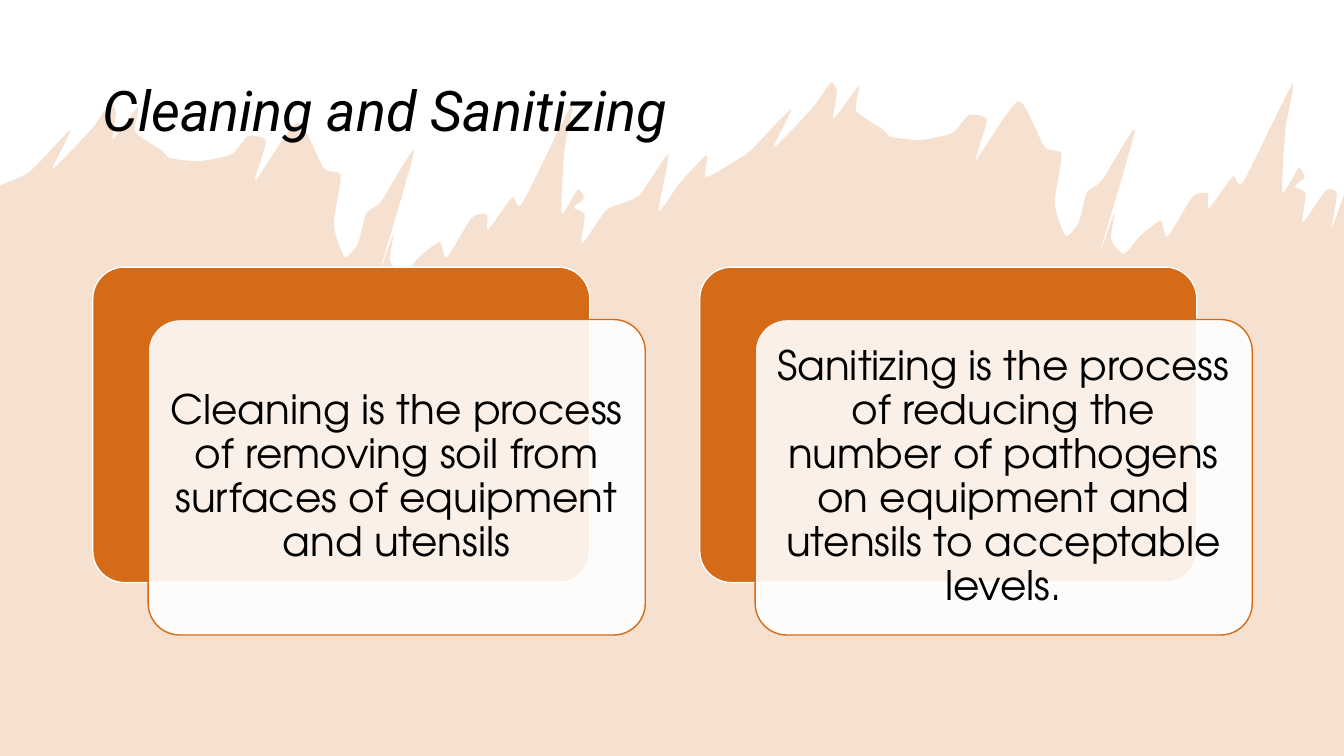
from pptx import Presentation
from pptx.dml.color import RGBColor
from pptx.enum.shapes import MSO_SHAPE
from pptx.enum.text import MSO_ANCHOR, PP_ALIGN
from pptx.oxml.ns import qn
from pptx.util import Inches, Pt
from lxml.etree import SubElement

# Content
HEADING = "Cleaning and Sanitizing"
DEFINITIONS = [
    "Cleaning is the process of removing soil from surfaces of equipment and utensils",
    "Sanitizing is the process of reducing the number of pathogens on equipment "
    "and utensils to acceptable levels.",
]
ORANGE, WHITE, BLACK = "D56A17", "FFFFFF", "000000"
SLIDE_W, SLIDE_H = 13.33, 7.5
HEADING_FORMAT = {"name": "Roboto", "size": Pt(40), "italic": True}
CARD_FORMAT = {"name": "TeX Gyre Adventor", "size": Pt(29)}

# Torn edge in inches; the tear is used twice, first shifted left and down
TEAR_SHIFT = (-7.15, 0.21)
TEAR = [
    (7.45, 1.49), (7.85, 1.08), (7.67, 1.47), (8.06, 1.07), (8.24, 0.82), (8.3, 0.91),
    (8.27, 1.18), (8.52, 0.85), (8.49, 1.1), (8.75, 1.28), (8.84, 1.36), (9.13, 1.39),
    (9.45, 1.32), (9.61, 1.14), (9.79, 1.19), (9.68, 1.59), (10.1, 1), (10.36, 1.46),
    (10.53, 1.53), (10.46, 2.02), (10.57, 2.34), (10.7, 2.21), (10.78, 1.91),
    (10.93, 1.79), (11.26, 1.28), (10.91, 2.5), (11.05, 2.12), (11.02, 2.38),
    (11.15, 2.52), (11.3, 2.35), (11.51, 2.19), (11.58, 2.35), (11.83, 1.95),
    (11.98, 1.92), (11.99, 2.07), (12.23, 1.75), (12.33, 1.81), (12.82, 0.83),
    (12.75, 1.27), (12.72, 1.91), (12.88, 1.67), (12.94, 1.76), (12.84, 1.85),
    (12.95, 1.92), (12.92, 2.21), (13.15, 1.89),
]
MIDDLE = [
    (6.1, 2.04), (6.34, 1.94), (6.63, 1.53), (6.53, 2.1), (6.74, 1.82), (7.01, 1.54),
    (7, 1.76), (7.32, 1.58),
]
RIGHT_END = [(13.26, 1.92), (13.21, 2.26), (SLIDE_W, 1.93)]
CURVE_STEPS = 5
TENSION = 0.3


def color(hex_string):
    return RGBColor.from_string(hex_string)


def paint(shape, fill, opacity=100, line=None):
    shape.shadow.inherit = False
    shape.fill.solid()
    shape.fill.fore_color.rgb = color(fill)
    if opacity < 100:
        fill_color = shape.fill._xPr.find(qn("a:solidFill"))[0]
        SubElement(fill_color, qn("a:alpha")).set("val", str(opacity * 1000))
    if line:
        shape.line.color.rgb = color(line)
        shape.line.width = Pt(1)
    else:
        shape.line.fill.background()


def write(frame, text, align, font_format):
    frame.text = text
    frame.word_wrap = True
    frame.vertical_anchor = MSO_ANCHOR.MIDDLE
    paragraph = frame.paragraphs[0]
    paragraph.alignment = align
    paragraph.line_spacing = 0.9
    font = paragraph.runs[0].font
    font.color.rgb = color(BLACK)
    for attribute, value in font_format.items():
        setattr(font, attribute, value)


def between(before, start, end, after, t):
    """Value at t on a smooth curve from start to end, bent by its neighbours."""
    slope_in, slope_out = TENSION * (end - before), TENSION * (after - start)
    return (start + slope_in * t + (3 * (end - start) - 2 * slope_in - slope_out) * t ** 2
            + (2 * (start - end) + slope_in + slope_out) * t ** 3)


def smooth(knots):
    padded = [knots[0]] + knots + [knots[-1]]
    points = [knots[0]]
    for neighbours in zip(padded, padded[1:], padded[2:], padded[3:]):
        for step in range(1, CURVE_STEPS + 1):
            points.append(tuple(between(*values, step / CURVE_STEPS)
                                for values in zip(*neighbours)))
    return points


def add_torn_background(slide):
    shift_x, shift_y = TEAR_SHIFT
    shifted = [(x + shift_x, y + shift_y) for x, y in TEAR]
    edge = smooth([(0, 1.84)] + shifted + MIDDLE + TEAR + RIGHT_END)
    edge += [(SLIDE_W, SLIDE_H), (0, SLIDE_H)]
    outline = [(Inches(x), Inches(y)) for x, y in edge]
    builder = slide.shapes.build_freeform(*outline[0])
    builder.add_line_segments(outline[1:], close=True)
    paint(builder.convert_to_shape(), ORANGE, opacity=20)


def add_card(slide, left, top, **look):
    card = slide.shapes.add_shape(MSO_SHAPE.ROUNDED_RECTANGLE, Inches(left),
                                  Inches(top), Inches(4.93), Inches(3.13))
    card.adjustments[0] = 0.1
    paint(card, **look)
    return card


def main():
    prs = Presentation()
    prs.slide_width, prs.slide_height = Inches(SLIDE_W), Inches(SLIDE_H)
    slide = prs.slides.add_slide(prs.slide_layouts[5])
    slide.background.fill.solid()
    slide.background.fill.fore_color.rgb = color(WHITE)

    add_torn_background(slide)

    # Title, brought in front of the background
    heading = slide.shapes.title
    slide.shapes._spTree.append(heading._element)
    heading.left, heading.top = Inches(0.92), Inches(0.4)
    heading.width, heading.height = Inches(11.5), Inches(1.45)
    write(heading.text_frame, HEADING, PP_ALIGN.LEFT, HEADING_FORMAT)

    # Definition cards, each over an orange backing
    for column, definition in enumerate(DEFINITIONS):
        left, top = 0.92 + 6.02 * column, 2.65
        add_card(slide, left, top, fill=ORANGE, line=WHITE)
        card = add_card(slide, left + 0.55, top + 0.52,
                        fill=WHITE, opacity=90, line=ORANGE)
        frame = card.text_frame
        for side in ("left", "right", "top", "bottom"):
            setattr(frame, f"margin_{side}", Inches(0.12))
        write(frame, definition, PP_ALIGN.CENTER, CARD_FORMAT)

    prs.save("out.pptx")


if __name__ == "__main__":
    main()
